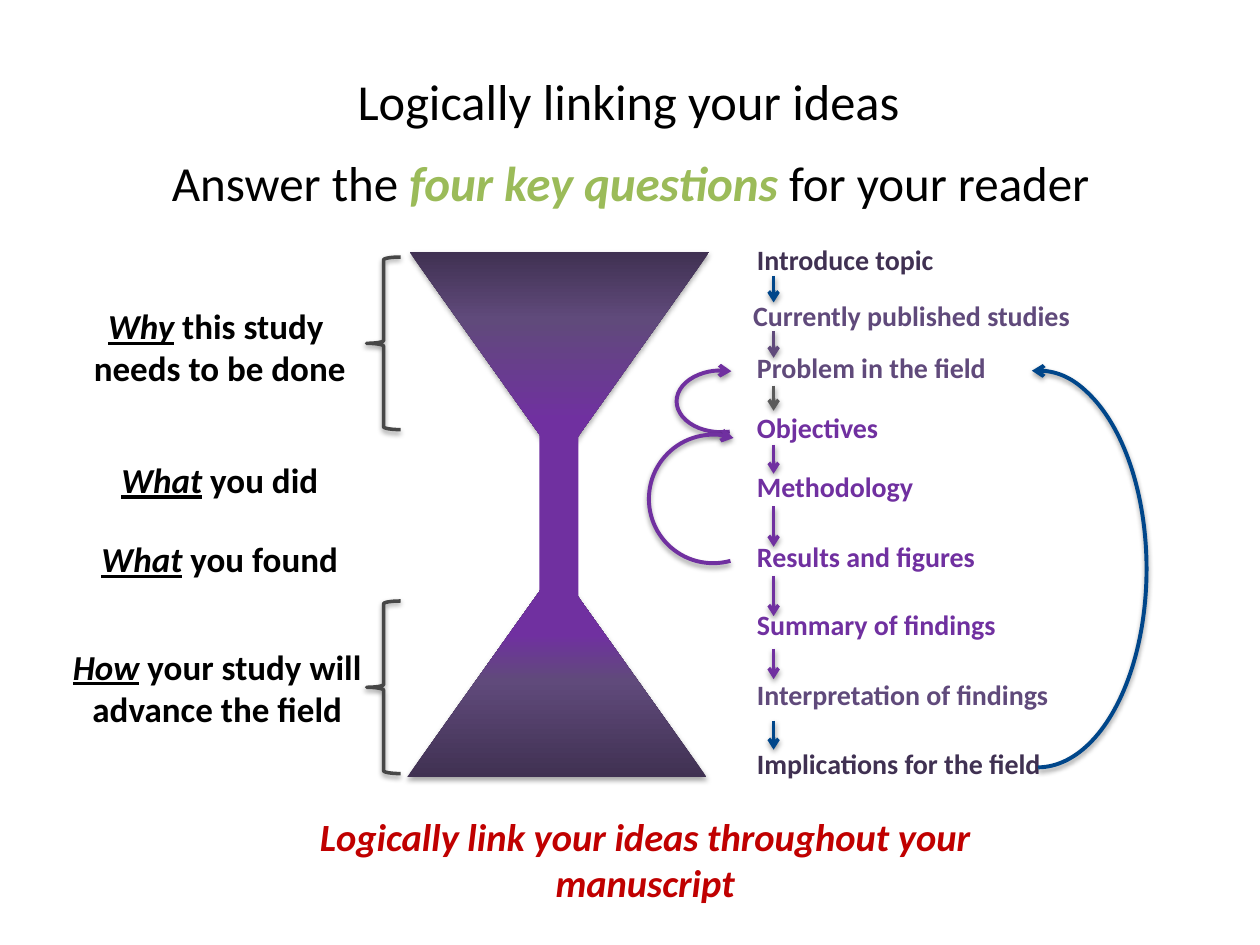
from copy import deepcopy

from lxml.etree import SubElement
from pptx import Presentation
from pptx.dml.color import RGBColor
from pptx.enum.shapes import MSO_CONNECTOR as Connector, MSO_SHAPE as Preset
from pptx.enum.text import MSO_ANCHOR as Anchor, MSO_AUTO_SIZE as AutoSize, PP_ALIGN as Align
from pptx.oxml.ns import qn
from pptx.util import Inches, Pt

DARK, MUTED, PURPLE = "403152", "604A7B", "7030A0"
BLUE, GREY, BLACK = "00468A", "5A5A5A", "000000"

TITLE = "Logically linking your ideas"
SUBTITLE = [("Answer the ", {}),
            ("four key questions ", {"color": "9BBB59", "bold": True, "italic": True}),
            ("for your reader", {})]
CLOSING = "Logically link your ideas throughout your manuscript"

STEPS = [
    ("Introduce topic", 5.91, 1.88, DARK),
    ("Currently published studies", 5.88, 2.32, MUTED),
    ("Problem in the field", 5.91, 2.73, MUTED),
    ("Objectives", 5.91, 3.21, PURPLE),
    ("Methodology", 5.91, 3.68, PURPLE),
    ("Results and figures", 5.91, 4.23, PURPLE),
    ("Summary of findings", 5.91, 4.77, PURPLE),
    ("Interpretation of findings", 5.91, 5.33, MUTED),
    ("Implications for the field", 5.91, 5.88, DARK),
]
STEP_ARROWS = [
    (2.19, 2.4, BLUE), (2.63, 2.84, MUTED), (3.06, 3.26, GREY), (3.53, 3.76, PURPLE),
    (4.02, 4.34, PURPLE), (4.57, 4.89, PURPLE), (5.15, 5.39, PURPLE), (5.72, 5.95, BLUE),
]
KEY = {"italic": True, "underline": True}
QUESTIONS = [
    ([[("Why", KEY), (" this study ", {})], [("needs to be done", {})]], (0.48, 2.37, 2.53, 0.77)),
    ([[("What", KEY), (" you did", {})]], (0.48, 3.59, 2.53, 0.44)),
    ([[("What", KEY), (" you found", {})]], (0.48, 4.22, 2.53, 0.44)),
    ([[("How", KEY), (" your study will advance the field", {})]], (0.46, 5.07, 2.53, 0.77)),
]
TRIANGLES = [
    ((3.23, 4.5, 2.38, 1.67), 0, (0, 0.46, 0.68)),
    ((3.25, 2, 2.38, 1.67), 180, (0, 0.32, 0.8)),
]
BRACE_TOPS = [2.04, 4.77]
ARCS = [
    ((5.37, 2.94, 0.71, 0.49), True, (150.93, 63.37), PURPLE),
    ((5.15, 3.45, 1.02, 1.02), True, (150.93, 63.37), PURPLE),
    ((7.37, 2.94, 1.73, 3.15), False, (161.02, 53.89), BLUE),
]


def rgb(color):
    return RGBColor.from_string(color)


def add_text(slide, paragraphs, box, size=16, color=BLACK, bold=False, italic=False,
             align=Align.LEFT, anchor=Anchor.TOP, margins=True, grow=True,
             line_spacing=None, space_before=None):
    shape = slide.shapes.add_textbox(*map(Inches, box))
    frame = shape.text_frame
    frame.word_wrap = True
    frame.vertical_anchor = anchor
    frame.auto_size = AutoSize.SHAPE_TO_FIT_TEXT if grow else AutoSize.NONE
    if not margins:
        frame.margin_left = frame.margin_right = frame.margin_top = frame.margin_bottom = 0
    if isinstance(paragraphs, str):
        paragraphs = [[(paragraphs, {})]]
    for index, runs in enumerate(paragraphs):
        paragraph = frame.add_paragraph() if index else frame.paragraphs[0]
        paragraph.alignment = align
        paragraph.line_spacing = line_spacing
        paragraph.space_before = space_before
        for text, changes in runs:
            look = {"color": color, "bold": bold, "italic": italic, "underline": False, **changes}
            run = paragraph.add_run()
            run.text = text
            font = run.font
            font.name, font.size = "Calibri", Pt(size)
            font.color.rgb = rgb(look["color"])
            font.bold, font.italic, font.underline = look["bold"], look["italic"], look["underline"]


def add_shadow(shape, opacity=38, distance=1.6):
    effects = SubElement(shape._element.spPr, qn("a:effectLst"))
    shadow = SubElement(effects, qn("a:outerShdw"), blurRad=str(Pt(3.1)), dist=str(Pt(distance)),
                        dir="5400000", rotWithShape="0")
    shade = SubElement(shadow, qn("a:srgbClr"), val=BLACK)
    SubElement(shade, qn("a:alpha"), val=str(opacity * 1000))


def style_line(shape, color, width, arrow_end=None):
    shape.line.color.rgb = rgb(color)
    shape.line.width = Pt(width)
    if arrow_end:
        SubElement(shape._element.spPr.find(qn("a:ln")), qn(arrow_end), type="arrow")
    add_shadow(shape)


def add_hourglass(slide):
    group = slide.shapes.add_group_shape()
    for box, rotation, positions in TRIANGLES:
        triangle = group.shapes.add_shape(Preset.ISOSCELES_TRIANGLE, *map(Inches, box))
        triangle.adjustments[0] = 0.5
        triangle.rotation = rotation
        fill = triangle.fill
        fill.gradient()
        fill.gradient_angle = 90
        stops = triangle._element.spPr.find(".//" + qn("a:gsLst"))
        stops.append(deepcopy(stops[0]))
        for stop, position, color in zip(fill.gradient_stops, positions, (DARK, MUTED, PURPLE)):
            stop.position = position
            stop.color.rgb = rgb(color)
        triangle.line.fill.background()
        add_shadow(triangle, 35, 1.8)
    neck = group.shapes.add_shape(Preset.RECTANGLE, *map(Inches, (4.28, 3.41, 0.31, 1.58)))
    neck.shadow.inherit = False
    neck.fill.solid()
    neck.fill.fore_color.rgb = rgb(PURPLE)
    neck.line.fill.background()


def add_outline(slide, preset, box, color, width, arrow_end=None, adjustments=(), flip=False):
    shape = slide.shapes.add_shape(preset, *map(Inches, box))
    for index, value in enumerate(adjustments):
        shape.adjustments[index] = value
    if flip:
        shape._element.spPr.find(qn("a:xfrm")).set("flipH", "1")
    shape.fill.background()
    style_line(shape, color, width, arrow_end)


def main():
    presentation = Presentation()
    presentation.slide_width, presentation.slide_height = Inches(10), Inches(7.5)
    slide = presentation.slides.add_slide(presentation.slide_layouts[6])

    add_text(slide, TITLE, (0.83, 0.59, 8.32, 0.41), size=28.8, align=Align.CENTER,
             anchor=Anchor.MIDDLE, grow=False)
    add_hourglass(slide)
    for text, left, top, color in STEPS:
        add_text(slide, text, (left, top, 3.46, 0.37), color=color, bold=True)
    add_text(slide, CLOSING, (1.74, 6.4, 6.76, 0.84), size=22, color="C00000", bold=True,
             italic=True, align=Align.CENTER)
    for start, end, color in STEP_ARROWS:
        arrow = slide.shapes.add_connector(Connector.STRAIGHT, *map(Inches, (6.14, start, 6.14, end)))
        style_line(arrow, color, 2, "a:tailEnd")
    for top in BRACE_TOPS:
        add_outline(slide, Preset.LEFT_BRACE, (2.91, top, 0.27, 1.37), "474747", 2)
    for paragraphs, box in QUESTIONS:
        add_text(slide, paragraphs, box, size=20, bold=True, align=Align.CENTER)
    for box, flip, angles, color in ARCS:
        add_outline(slide, Preset.ARC, box, color, 2.25, "a:headEnd", angles, flip)
    add_text(slide, [SUBTITLE], (0.39, 1.37, 9.23, 0.39), size=28, align=Align.CENTER,
             margins=False, grow=False, line_spacing=Pt(22), space_before=Pt(9))

    presentation.save("out.pptx")


if __name__ == "__main__":
    main()
